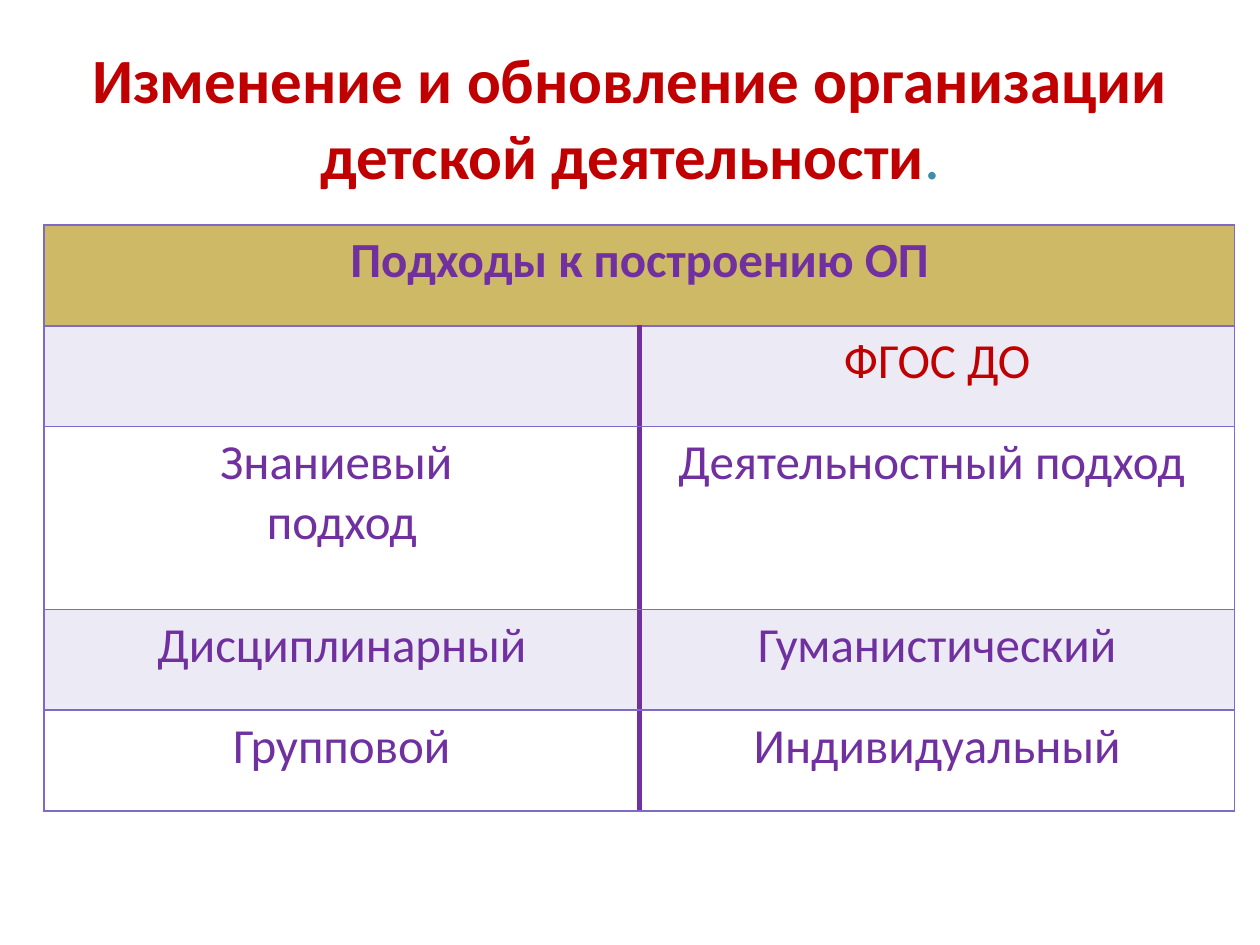
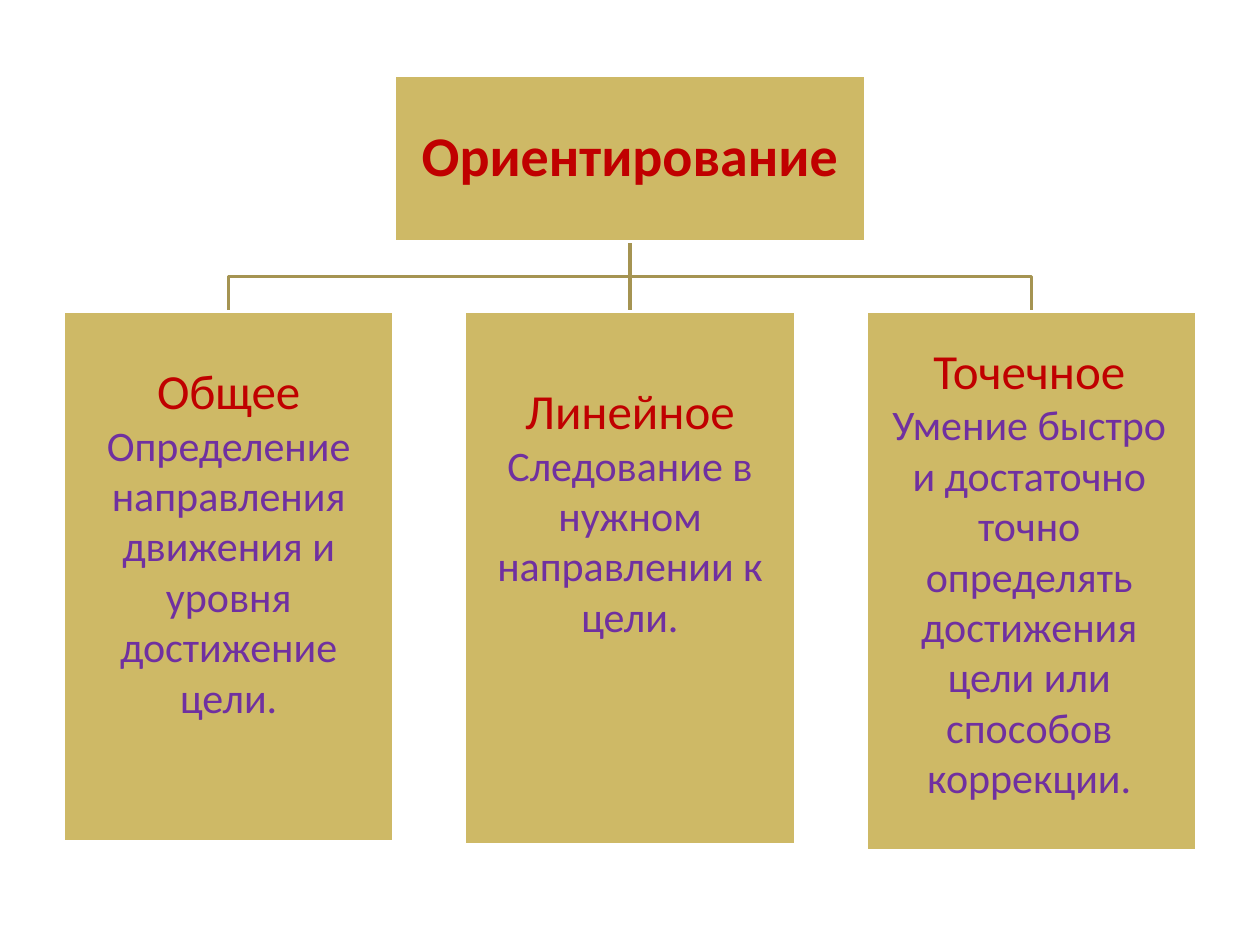
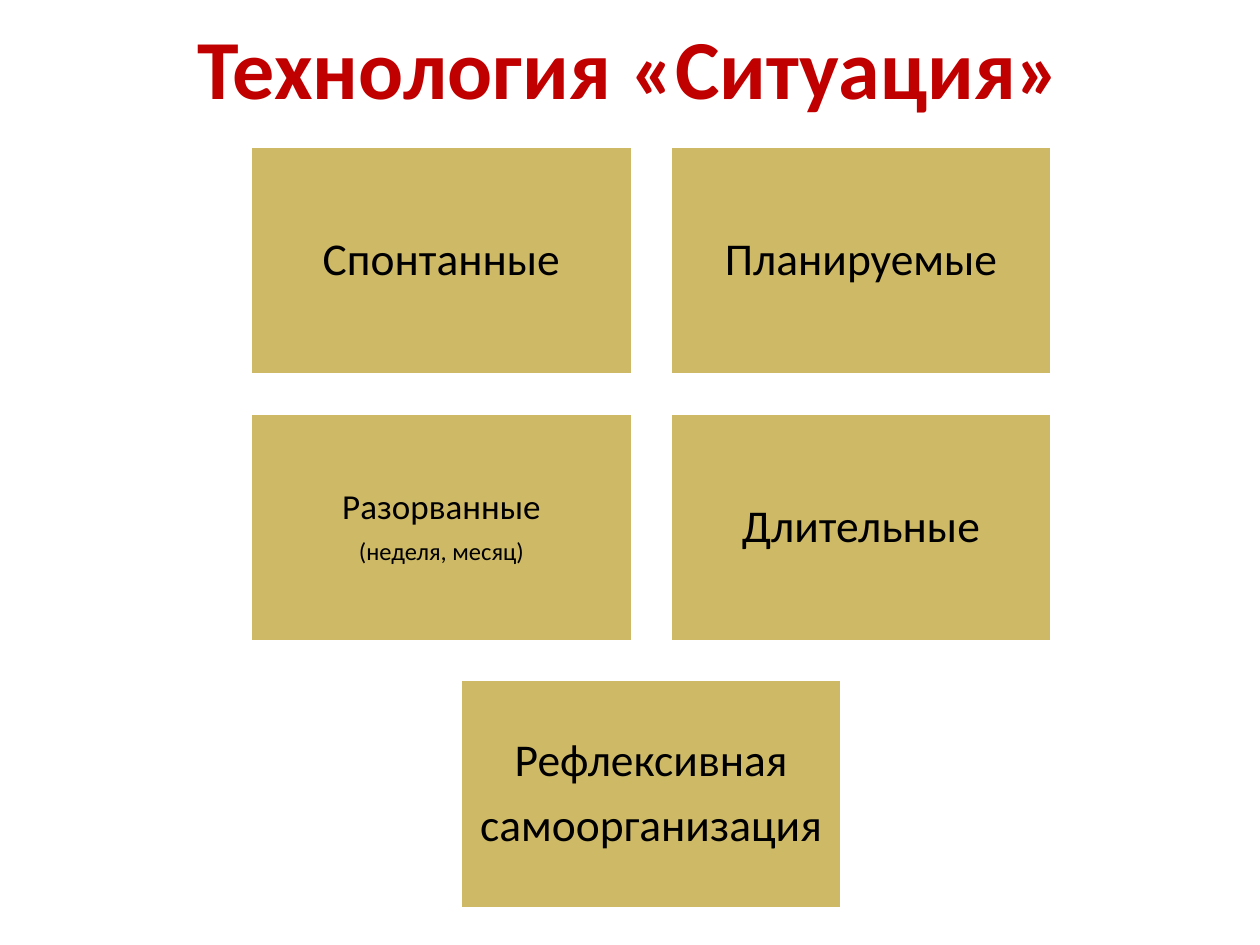
"""Build three slides on approaches, orientation and situations in preschool learning."""
import pptx
import pptx.dml.color
import pptx.enum.shapes
import pptx.enum.text
import pptx.oxml.ns
import pptx.util
from lxml import etree

Pt = pptx.util.Pt
ALIGN = pptx.enum.text.PP_ALIGN
ANCHOR = pptx.enum.text.MSO_ANCHOR
RECTANGLE = pptx.enum.shapes.MSO_SHAPE.RECTANGLE
STRAIGHT = pptx.enum.shapes.MSO_CONNECTOR.STRAIGHT
qn = pptx.oxml.ns.qn

FONT = "Calibri"
COLORS = {
    "red": "C00000", "purple": "7030A0", "teal": "3E8EA9", "black": "000000",
    "white": "FFFFFF", "gold": "CEB966", "branch": "A59452",
    "lilac": "ECEBF5", "border": "7E6BC9",
}

APPROACH_TITLE = [("Изменение и обновление организации детской деятельности", "red", True),
                  (".", "teal", False)]
APPROACH_HEADER = "Подходы к построению ОП"
APPROACH_ROWS = [
    ("", "ФГОС ДО"),
    ("Знаниевый \nподход", "Деятельностный подход "),
    ("Дисциплинарный", "Гуманистический"),
    ("Групповой", "Индивидуальный"),
]
ROW_HEIGHTS = [57.6, 57.6, 104.4, 57.6, 57.6]

ORIENTATION = "Ориентирование"
ORIENTATION_KINDS = [
    {"name": "Общее", "text": "Определение направления движения и уровня достижение цели.",
     "card_height": 303, "text_area": (43.2, 202.3, 175, 216)},
    {"name": "Линейное", "text": "Следование в нужном направлении к цели.",
     "card_height": 304.6, "text_area": (275, 213.8, 170, 191.5)},
    {"name": "Точечное",
     "text": "Умение быстро и достаточно точно определять достижения цели или способов коррекции.",
     "card_height": 308.2, "text_area": (501.8, 190.8, 172.8, 273.6)},
]

SITUATION_TITLE = [("Технология «Ситуация»", "red", True)]
SITUATION_ROWS = [
    [[("Спонтанные", 26)], [("Планируемые", 26)]],
    [[("Разорванные", 20), ("(неделя, месяц)", 14)], [("Длительные", 26)]],
    [[("Рефлексивная", 26), ("самоорганизация", 26)]],
]


def rgb(name):
    return pptx.dml.color.RGBColor.from_string(COLORS[name])


def points(*values):
    return [Pt(value) for value in values]


def style(span, size, color, bold=False):
    span.font.name = FONT
    span.font.size = Pt(size)
    span.font.bold = bold
    span.font.color.rgb = rgb(color)


def write(frame, lines):
    frame.word_wrap = True
    frame.text = "\n".join(line[0] for line in lines)
    for para, (_, *look) in zip(frame.paragraphs, lines):
        para.alignment = ALIGN.CENTER
        for span in para.runs:
            style(span, *look)


def set_insets(frame, inset):
    frame.margin_left = frame.margin_right = frame.margin_top = frame.margin_bottom = Pt(inset)


def set_title(page, spans, size, area):
    title = page.shapes.title
    title.left, title.top, title.width, title.height = points(*area)
    frame = title.text_frame
    frame.word_wrap = True
    frame.auto_size = pptx.enum.text.MSO_AUTO_SIZE.NONE
    frame.vertical_anchor = ANCHOR.MIDDLE
    para = frame.paragraphs[0]
    para.alignment = ALIGN.CENTER
    for text, color, bold in spans:
        span = para.add_run()
        span.text = text
        style(span, size, color, bold)
    return frame


def add_card(page, area, lines=(), inset=0):
    card = page.shapes.add_shape(RECTANGLE, *points(*area))
    card.shadow.inherit = False
    card.fill.solid()
    card.fill.fore_color.rgb = rgb("gold")
    card.line.color.rgb = rgb("white")
    card.line.width = Pt(2)
    if lines:
        frame = card.text_frame
        write(frame, lines)
        frame.vertical_anchor = ANCHOR.MIDDLE
        set_insets(frame, inset)
        for para, line in zip(frame.paragraphs, lines):
            para.line_spacing = 0.9
            para.space_after = Pt(round(line[1] * 0.35, 1))
    return card


def set_borders(cell, divider_side=None):
    properties = cell._tc.get_or_add_tcPr()
    for index, side in enumerate("LRTB"):
        color, width = ("purple", 3) if side == divider_side else ("border", 1)
        line = etree.Element(qn("a:ln" + side), w=str(Pt(width)))
        fill = etree.SubElement(line, qn("a:solidFill"))
        etree.SubElement(fill, qn("a:srgbClr"), val=COLORS[color])
        properties.insert(index, line)


def fill_cell(cell, text, fill, color="purple", bold=False, divider_side=None):
    cell.fill.solid()
    cell.fill.fore_color.rgb = rgb(fill)
    if text:
        write(cell.text_frame, [(line, 28, color, bold) for line in text.split("\n")])
    set_borders(cell, divider_side)


def build_approaches(deck):
    page = deck.slides.add_slide(deck.slide_layouts[5])
    set_title(page, APPROACH_TITLE, 36, (36, 21.6, 648, 90))
    frame = page.shapes.add_table(len(ROW_HEIGHTS), 2, *points(25.2, 128.6, 680.4, sum(ROW_HEIGHTS)))
    table = frame.table
    for row, height in zip(table.rows, ROW_HEIGHTS):
        row.height = Pt(height)
    table.cell(0, 0).merge(table.cell(0, 1))
    for column in range(2):
        fill_cell(table.cell(0, column), "" if column else APPROACH_HEADER, "gold", bold=True)
    for number, texts in enumerate(APPROACH_ROWS, 1):
        for column, text in enumerate(texts):
            fill_cell(table.cell(number, column), text, "lilac" if number % 2 else "white",
                      "red" if number == 1 else "purple", divider_side="RL"[column])


def style_branch(branch):
    branch.line.color.rgb = rgb("branch")
    branch.line.width = Pt(2)


def add_elbow(page, start_x, start_y, end_x, end_y):
    middle_y = (start_y + end_y) / 2
    builder = page.shapes.build_freeform(Pt(start_x), Pt(start_y))
    corners = [(start_x, middle_y), (end_x, middle_y), (end_x, end_y)]
    builder.add_line_segments([points(*corner) for corner in corners], close=False)
    elbow = builder.convert_to_shape()
    elbow.shadow.inherit = False
    elbow.fill.background()
    style_branch(elbow)


def build_orientation(deck):
    page = deck.slides.add_slide(deck.slide_layouts[6])
    root_area = (225, 43, 270, 95)
    root_x, root_bottom = 360, 138
    card_top, card_width, pitch = 178, 189, 229.5
    lefts = [36 + pitch * index for index in range(len(ORIENTATION_KINDS))]

    for left in (lefts[2], lefts[0]):
        add_elbow(page, root_x, root_bottom, left + card_width / 2, card_top)
    trunk = page.shapes.add_connector(STRAIGHT, *points(root_x, root_bottom, root_x, card_top))
    style_branch(trunk)
    etree.SubElement(trunk._element.spPr, qn("a:effectLst"))

    root = add_card(page, root_area, [(ORIENTATION, 32, "red", True)], 1.5)
    cards = [add_card(page, (left, card_top, card_width, kind["card_height"]))
             for left, kind in zip(lefts, ORIENTATION_KINDS)]
    trunk.begin_connect(root, 2)
    trunk.end_connect(cards[1], 0)
    for kind in ORIENTATION_KINDS:
        box = page.shapes.add_textbox(*points(*kind["text_area"]))
        write(box.text_frame, [(kind["name"], 28, "red"), (kind["text"], 24, "purple")])


def build_situations(deck):
    page = deck.slides.add_slide(deck.slide_layouts[5])
    set_insets(set_title(page, SITUATION_TITLE, 48, (36, 8, 648, 59)), 0)
    width, height, gap = 218.2, 130.8, 21.6
    center_x, top = 372.2, 83.6
    for number, row in enumerate(SITUATION_ROWS):
        left = center_x - (len(row) * (width + gap) - gap) / 2
        for column, lines in enumerate(row):
            area = (left + column * (width + gap), top + number * (height + gap), width, height)
            add_card(page, area, [(text, size, "black") for text, size in lines], 7)


def main():
    deck = pptx.Presentation()
    deck.slide_width, deck.slide_height = points(720, 540)
    build_approaches(deck)
    build_orientation(deck)
    build_situations(deck)
    deck.save("out.pptx")


if __name__ == "__main__":
    main()
